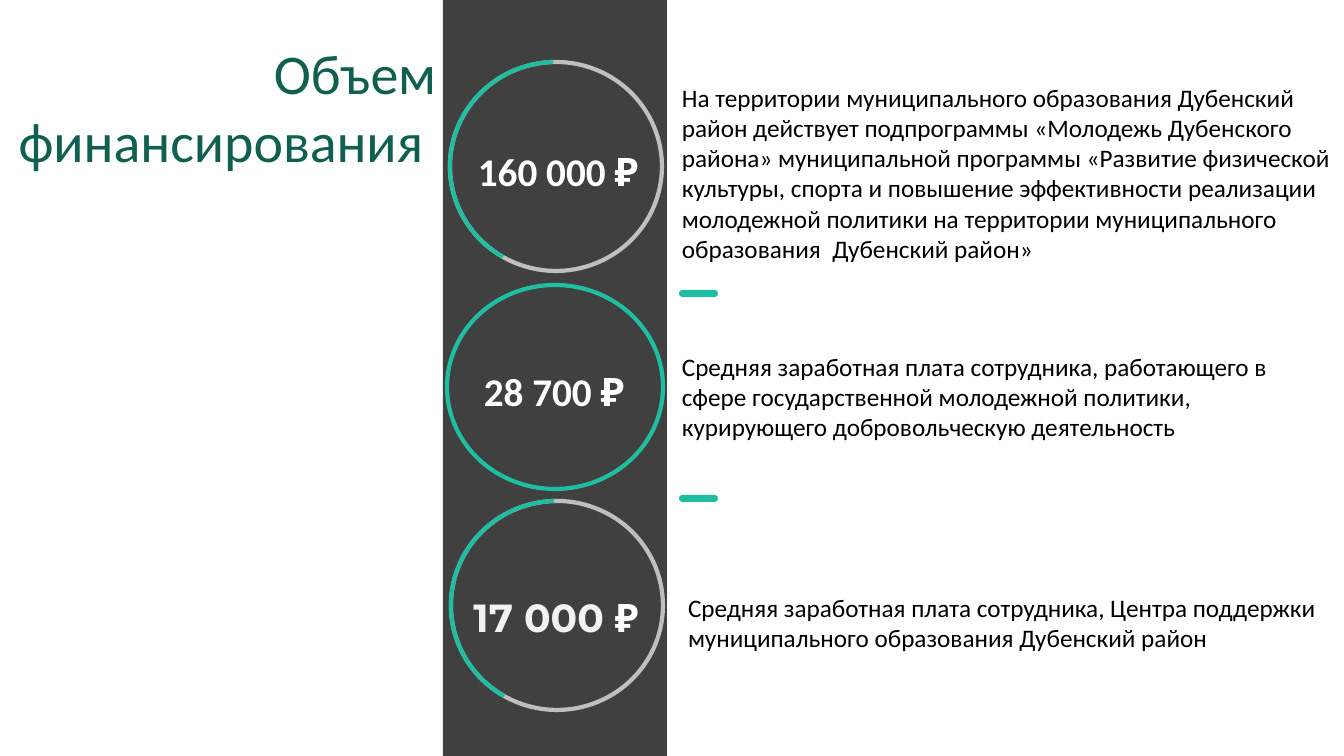
from dataclasses import dataclass

from pptx import Presentation
from pptx.dml.color import RGBColor
from pptx.enum.shapes import MSO_SHAPE
from pptx.enum.text import PP_ALIGN
from pptx.util import Emu, Inches, Pt

RECTANGLE = MSO_SHAPE.RECTANGLE
ROUNDED = MSO_SHAPE.ROUNDED_RECTANGLE
ELLIPSE = MSO_SHAPE.OVAL
ARC = MSO_SHAPE.ARC
LEFT, CENTER, RIGHT = PP_ALIGN.LEFT, PP_ALIGN.CENTER, PP_ALIGN.RIGHT

EMU_PER_PX = Inches(1) / 100.8
# Arc ends in units of 100000/60000 degrees
ARC_START, ARC_END = 72.16, 161.09


@dataclass(frozen=True)
class Theme:
    font: str = "Calibri"
    display_font: str = "Montserrat"
    band: str = "404040"
    track: str = "BFBFBF"
    accent: str = "20BEA0"
    title: str = "105F50"
    body: str = "000000"
    white: str = "FFFFFF"
    off_white: str = "F2F2F2"
    title_size: int = 40
    amount_size: int = 28
    body_size: int = 18
    ring_width: int = 3


@dataclass(frozen=True)
class Box:
    left: int
    top: int
    width: int
    height: int

    def emu(self) -> list[Emu]:
        return [px(n) for n in (self.left, self.top, self.width, self.height)]


@dataclass(frozen=True)
class Run:
    text: str
    color: str
    font: str


@dataclass(frozen=True)
class Ring:
    box: Box
    label_box: Box
    runs: tuple[Run, ...]
    partial: bool


@dataclass(frozen=True)
class Note:
    box: Box
    text: str
    indent: int = 0


THEME = Theme()


def px(length: int) -> Emu:
    return Emu(round(length * EMU_PER_PX))


def rgb(color: str) -> RGBColor:
    return RGBColor.from_string(color)


def white_run(text: str) -> Run:
    return Run(text, THEME.white, THEME.font)


def add_filled(slide, kind, box: Box, color: str):
    shape = slide.shapes.add_shape(kind, *box.emu())
    shape.shadow.inherit = False
    shape.fill.solid()
    shape.fill.fore_color.rgb = rgb(color)
    shape.line.fill.background()
    return shape


def add_outline(slide, kind, box: Box, color: str):
    shape = slide.shapes.add_shape(kind, *box.emu())
    shape.shadow.inherit = False
    shape.fill.background()
    shape.line.color.rgb = rgb(color)
    shape.line.width = Pt(THEME.ring_width)
    return shape


def add_text(slide, box: Box, runs: tuple[Run, ...], size: int,
             alignment=LEFT, bold: bool = False, indent: int = 0) -> None:
    frame = slide.shapes.add_textbox(*box.emu()).text_frame
    frame.word_wrap = True
    frame.margin_left = frame.margin_left + px(indent)
    paragraph = frame.paragraphs[0]
    paragraph.alignment = alignment
    paragraph.font.size = Pt(size)
    paragraph.font.bold = bold
    for item in runs:
        run = paragraph.add_run()
        run.text = item.text
        run.font.name = item.font
        run.font.color.rgb = rgb(item.color)


def add_ring(slide, ring: Ring) -> None:
    add_outline(slide, ELLIPSE, ring.box, THEME.track if ring.partial else THEME.accent)
    if ring.partial:
        arc = add_outline(slide, ARC, ring.box, THEME.accent)
        arc.adjustments[0] = ARC_START
        arc.adjustments[1] = ARC_END
    add_text(slide, ring.label_box, ring.runs, THEME.amount_size, CENTER, bold=True)


RINGS = (
    Ring(Box(450, 62, 212, 209), Box(464, 142, 188, 57),
         (white_run("160 000 ₽"),), True),
    Ring(Box(447, 285, 216, 204), Box(455, 362, 198, 57),
         (white_run("28 700 ₽"),), False),
    Ring(Box(451, 501, 212, 209), Box(455, 588, 202, 57),
         (Run("17 000 ", THEME.off_white, THEME.display_font), white_run("₽")), True),
)

NOTES = (
    Note(Box(672, 77, 671, 194),
         "На территории муниципального образования Дубенский район действует "
         "подпрограммы «Молодежь Дубенского района» муниципальной программы "
         "«Развитие физической культуры, спорта и повышение эффективности "
         "реализации молодежной политики на территории муниципального "
         "образования  Дубенский район»"),
    Note(Box(672, 346, 671, 102),
         "Средняя заработная плата сотрудника, работающего в сфере "
         "государственной молодежной политики, курирующего добровольческую "
         "деятельность"),
    Note(Box(666, 587, 677, 72),
         "Средняя заработная плата сотрудника, Центра поддержки "
         "муниципального образования Дубенский район", indent=12),
)

DIVIDER_TOPS = (290, 495)


def main() -> None:
    presentation = Presentation()
    presentation.slide_width = px(1344)
    presentation.slide_height = px(756)
    slide = presentation.slides.add_slide(presentation.slide_layouts[6])

    # Title and dark band
    add_filled(slide, RECTANGLE, Box(443, 0, 224, 756), THEME.band)
    add_text(slide, Box(0, 34, 446, 146),
             (Run("Объем финансирования ", THEME.title, THEME.font),),
             THEME.title_size, RIGHT)

    # Amounts in rings
    for ring in RINGS:
        add_ring(slide, ring)

    # Explanations
    for note in NOTES:
        add_text(slide, note.box, (Run(note.text, THEME.body, THEME.font),),
                 THEME.body_size, indent=note.indent)

    # Dividers between explanations
    for top in DIVIDER_TOPS:
        divider = add_filled(slide, ROUNDED, Box(679, top, 39, 7), THEME.accent)
        divider.adjustments[0] = 0.5

    presentation.save("out.pptx")


if __name__ == "__main__":
    main()
